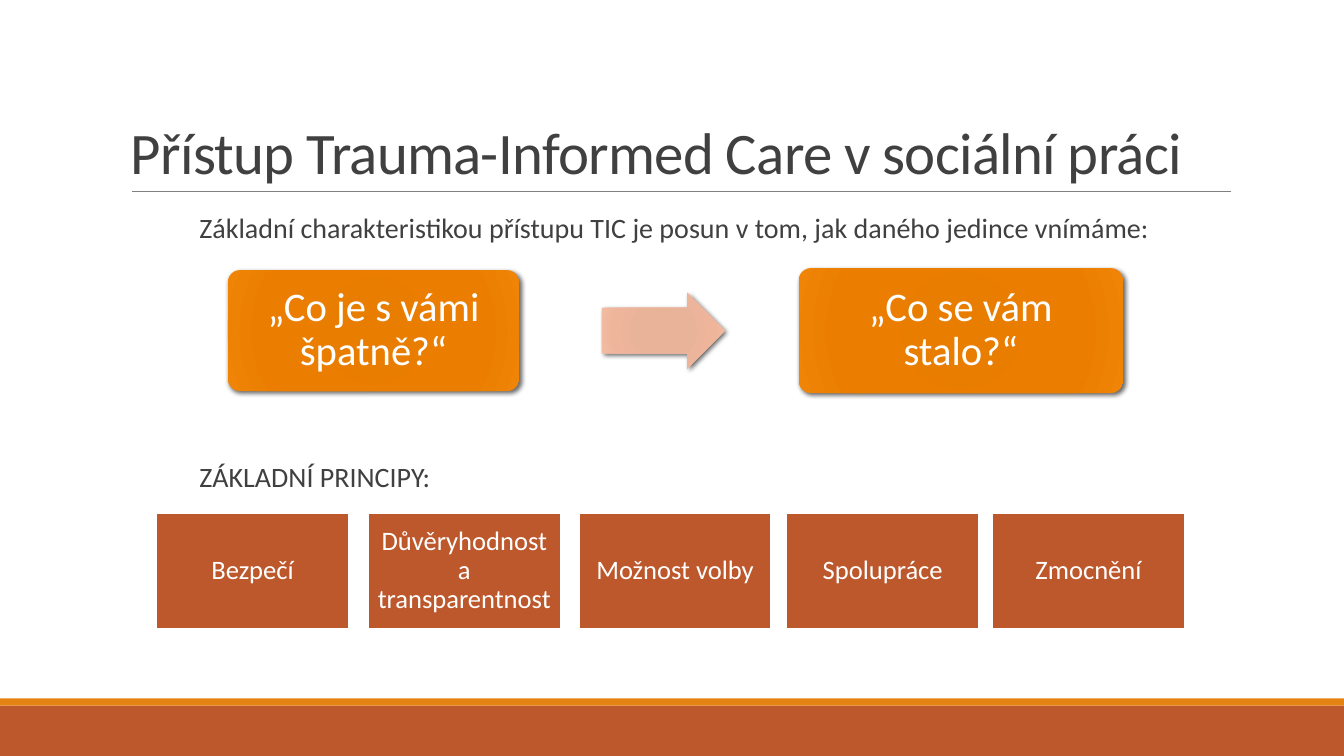
from lxml import etree
from pptx import Presentation
from pptx.dml.color import RGBColor
from pptx.enum.shapes import MSO_CONNECTOR, MSO_SHAPE
from pptx.enum.text import MSO_ANCHOR, PP_ALIGN
from pptx.oxml.ns import qn
from pptx.util import Inches, Pt

RECT, ROUNDED, ARROW = MSO_SHAPE.RECTANGLE, MSO_SHAPE.ROUNDED_RECTANGLE, MSO_SHAPE.RIGHT_ARROW
TOP, MIDDLE, BOTTOM = MSO_ANCHOR.TOP, MSO_ANCHOR.MIDDLE, MSO_ANCHOR.BOTTOM
LEFT, CENTER = PP_ALIGN.LEFT, PP_ALIGN.CENTER

SLIDE_W, SLIDE_H = 13.33, 7.5
FONT = "Calibri"
COLORS = {"rust": "BD582C", "orange": "E48312", "rule": "808080",
          "ink": "404040", "white": "FFFFFF", "shadow": "000000"}
GRADIENT_STOPS = (0, 34, 70, 100)
QUESTION_GLOW = ("E57B00", "E87D00", "EB7E00", "EF8407")
ARROW_GLOW = ("E8B196", "E9B399", "EEB59A", "F3C0A8")


def rgb(name):
    return RGBColor.from_string(COLORS[name])


def inches(box):
    return [Inches(length) for length in box]


def write(holder, text, size, color, align, anchor, insets, spacing=0.9):
    """Fill a shape or text box with one paragraph; return its run."""
    frame = holder.text_frame
    side, edge = inches(insets)
    frame_format = {"word_wrap": True, "vertical_anchor": anchor,
                    "margin_left": side, "margin_right": side,
                    "margin_top": edge, "margin_bottom": edge}
    for attribute, value in frame_format.items():
        setattr(frame, attribute, value)
    paragraph = frame.paragraphs[0]
    paragraph.alignment, paragraph.line_spacing = align, spacing
    run = paragraph.add_run()
    run.text = text
    for attribute, value in {"name": FONT, "size": Pt(size)}.items():
        setattr(run.font, attribute, value)
    run.font.color.rgb = rgb(color)
    return run


def add_block(slide, kind, box, color):
    block = slide.shapes.add_shape(kind, *inches(box))
    block.shadow.inherit = False
    block.fill.solid()
    block.fill.fore_color.rgb = rgb(color)
    block.line.fill.background()
    return block


def add_glow(block, glow):
    """Give a block a circular gradient and a soft shadow."""
    properties = block._element.spPr
    gradient = etree.Element(qn("a:gradFill"), rotWithShape="1")
    stops = etree.SubElement(gradient, qn("a:gsLst"))
    for position, color in zip(GRADIENT_STOPS, glow):
        stop = etree.SubElement(stops, qn("a:gs"), pos=str(position * 1000))
        etree.SubElement(stop, qn("a:srgbClr"), val=color)
    circle = etree.SubElement(gradient, qn("a:path"), path="circle")
    etree.SubElement(circle, qn("a:fillToRect"), dict.fromkeys("ltrb", "100000"))
    properties.replace(properties.find(qn("a:solidFill")), gradient)

    effects = properties.find(qn("a:effectLst"))
    shadow = etree.SubElement(effects, qn("a:outerShdw"), blurRad=str(Pt(3.5)),
                              dist=str(Pt(2)), dir=str(45 * 60000), rotWithShape="0")
    tint = etree.SubElement(shadow, qn("a:srgbClr"), val=COLORS["shadow"])
    etree.SubElement(tint, qn("a:alpha"), val="60000")


def add_footer(slide, top, stripe):
    """Orange stripe above a rust band, down to the slide's edge."""
    add_block(slide, RECT, (0, top + stripe, SLIDE_W, SLIDE_H - top - stripe), "rust")
    add_block(slide, RECT, (0, top, SLIDE_W, stripe), "orange")


def add_title(slide, box, text):
    left, top, width, height = box
    base = top + height
    rule = slide.shapes.add_connector(
        MSO_CONNECTOR.STRAIGHT, *inches((left + 0.11, base, left + width + 0.01, base)))
    rule.line.color.rgb = rgb("rule")
    rule.line.width = Pt(0.5)
    etree.SubElement(rule._element.spPr, qn("a:effectLst"))
    title = slide.shapes.add_textbox(*inches(box))
    run = write(title, text, 42, "ink", LEFT, BOTTOM, (0.1, 0.05), 0.85)
    run.font._element.set("spc", "-50")


def add_lead(slide, box, text):
    lead = slide.shapes.add_textbox(*inches(box))
    write(lead, text, 20, "ink", LEFT, TOP, (0.1, 0.05))


def add_shift(slide, box, before, after):
    """Two questions joined by an arrow, all centred on one line."""
    left, top, width, height = box
    parts = (  # kind, offset, width, height, adjustments, glow, wording
        (ROUNDED, 0, 2.89, 1.2, (0.1,), QUESTION_GLOW, before),
        (ARROW, 3.71, 1.22, 0.75, (0.6, 0.5), ARROW_GLOW, None),
        (ROUNDED, width - 3.22, 3.22, height, (0.1,), QUESTION_GLOW, after),
    )
    for kind, offset, part_w, part_h, adjustments, glow, wording in parts:
        part = add_block(slide, kind, (left + offset, top + (height - part_h) / 2,
                                       part_w, part_h), "orange")
        for index, value in enumerate(adjustments):
            part.adjustments[index] = value
        add_glow(part, glow)
        if wording:
            write(part, wording, 29, "white", CENTER, MIDDLE, (0.15, 0.15))


def add_principles(slide, box, principles):
    """Row of equal tiles, each at its own offset from the left."""
    left, top, tile_w, tile_h = box
    for principle, offset in principles.items():
        tile = add_block(slide, RECT, (left + offset, top, tile_w, tile_h), "rust")
        tile.line.color.rgb = rgb("white")
        tile.line.width = Pt(1.25)
        write(tile, principle, 19, "white", CENTER, MIDDLE, (0.08, 0.08))


def main():
    deck = Presentation()
    deck.slide_width, deck.slide_height = inches((SLIDE_W, SLIDE_H))
    slide = deck.slides.add_slide(deck.slide_layouts[6])

    add_footer(slide, 6.93, 0.07)
    add_title(slide, (1.2, 0.31, 11, 1.59), "Přístup Trauma-Informed Care v sociální práci")

    # Change of view
    add_lead(slide, (1.88, 2.08, 11, 0.45),
             "Základní charakteristikou přístupu TIC je posun v tom, jak daného jedince vnímáme:")
    add_shift(slide, (2.26, 2.66, 8.88, 1.24), "„Co je s vámi špatně?“", "„Co se vám stalo?“")

    # Principles
    add_lead(slide, (1.88, 4.55, 11, 0.45), "ZÁKLADNÍ PRINCIPY:")
    add_principles(slide, (1.55, 5.09, 1.91, 1.15), {
        "Bezpečí": 0,
        "Důvěryhodnost a transparentnost": 2.1,
        "Možnost volby": 4.19,
        "Spolupráce": 6.25,
        "Zmocnění": 8.29,
    })
    deck.save("out.pptx")


if __name__ == "__main__":
    main()
